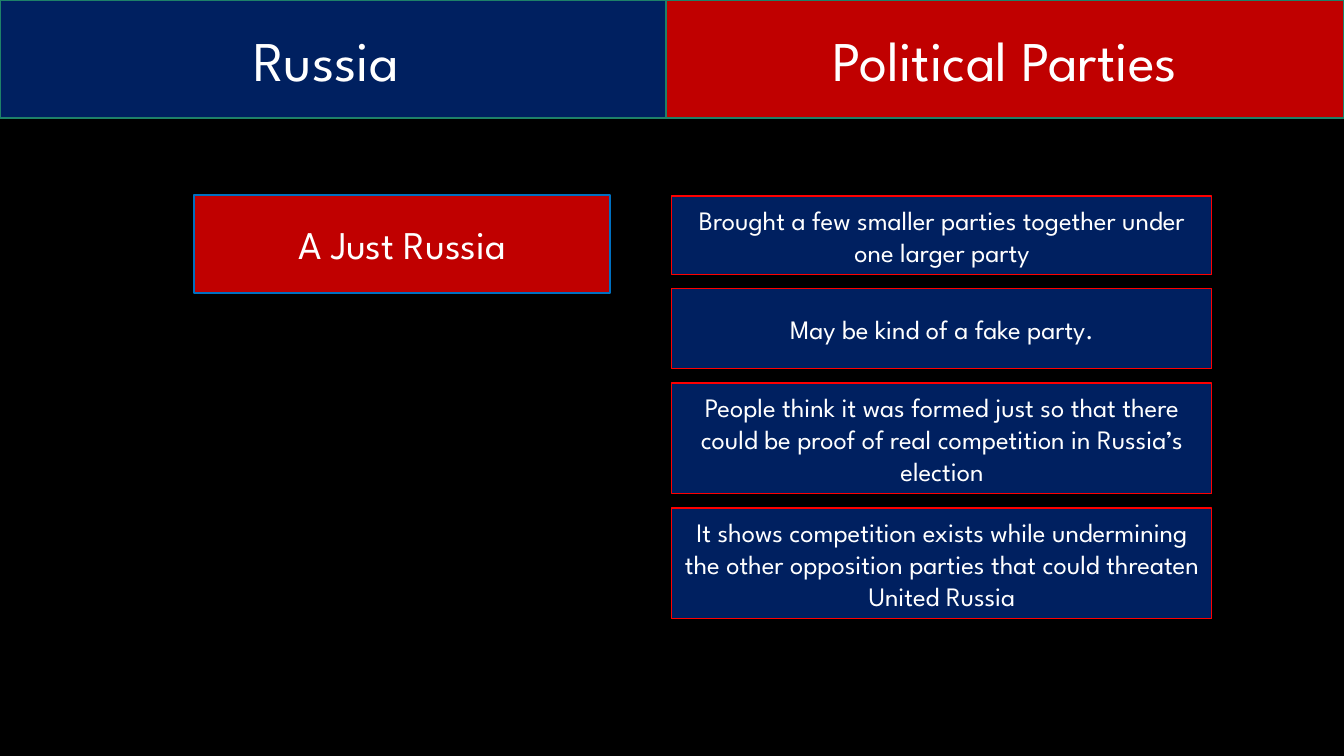
from pptx import Presentation
from pptx.dml.color import RGBColor
from pptx.enum.shapes import MSO_SHAPE
from pptx.enum.text import MSO_ANCHOR, PP_ALIGN
from pptx.util import Pt

PX = 12192000 / 1344  # EMU per px
FONT = "League Spartan"
BLACK = RGBColor(0x00, 0x00, 0x00)
WHITE = RGBColor(0xFF, 0xFF, 0xFF)
NAVY = RGBColor(0x00, 0x20, 0x60)
CRIMSON = RGBColor(0xC0, 0x00, 0x00)
GREEN = RGBColor(0x1E, 0x81, 0x68)
BLUE = RGBColor(0x00, 0x70, 0xC0)
RED = RGBColor(0xFF, 0x00, 0x00)


def px(n):
    return round(n * PX)


def add_box(slide, text, x, y, w, h, fill, line, line_width, size):
    sp = slide.shapes.add_shape(MSO_SHAPE.RECTANGLE, px(x), px(y), px(w), px(h))
    sp.shadow.inherit = False
    sp.fill.solid()
    sp.fill.fore_color.rgb = fill
    sp.line.color.rgb = line
    sp.line.width = Pt(line_width)
    tf = sp.text_frame
    tf.word_wrap = True
    tf.vertical_anchor = MSO_ANCHOR.MIDDLE
    tf.text = text
    p = tf.paragraphs[0]
    p.alignment = PP_ALIGN.CENTER
    font = p.runs[0].font
    font.name = FONT
    font.size = Pt(size)
    font.color.rgb = WHITE


prs = Presentation()
prs.slide_width, prs.slide_height = px(1344), px(756)
slide = prs.slides.add_slide(prs.slide_layouts[6])
slide.background.fill.solid()
slide.background.fill.fore_color.rgb = BLACK

# Header halves
add_box(slide, "Russia ", 0, 0, 666, 118, NAVY, GREEN, 1, 40)
add_box(slide, "Political Parties", 666, 0, 678, 118, CRIMSON, GREEN, 1, 40)

# Party name
add_box(slide, "A Just Russia", 194, 195, 416, 98, CRIMSON, BLUE, 1, 28)

# Facts about the party, stacked with equal gaps
facts = [
    ("Brought a few smaller parties together under one larger party", 79),
    ("May be kind of a fake party.", 80),
    ("People think it was formed just so that there could be proof of real "
     "competition in Russia’s election", 111),
    ("It shows competition exists while undermining the other opposition "
     "parties that could threaten United Russia", 111),
]
GAP = 14
y = 196
for text, height in facts:
    add_box(slide, text, 672, y, 540, height, NAVY, RED, 0.75, 19)
    y += height + GAP

prs.save("out.pptx")
